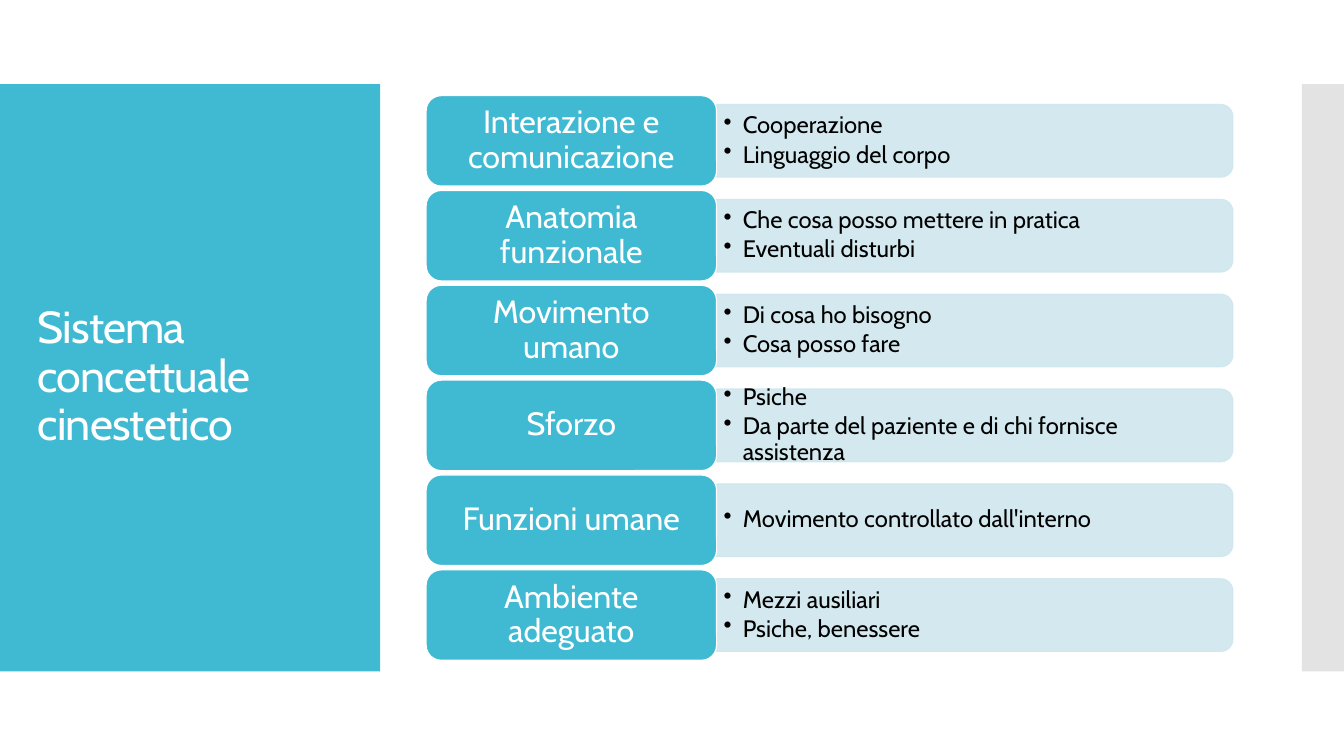
from pptx import Presentation
from pptx.dml.color import RGBColor
from pptx.enum.shapes import MSO_SHAPE as Shape
from pptx.enum.text import MSO_ANCHOR as Anchor, PP_ALIGN as Align
from pptx.oxml.ns import qn
from pptx.util import Cm, Pt
from lxml.etree import SubElement

# Content
TITLE = "Sistema concettuale cinestetico"
CONCEPTS = [
    ("Interazione e comunicazione", ["Cooperazione", "Linguaggio del corpo"]),
    ("Anatomia funzionale", ["Che cosa posso mettere in pratica", "Eventuali disturbi"]),
    ("Movimento umano", ["Di cosa ho bisogno", "Cosa posso fare"]),
    ("Sforzo", ["Psiche", "Da parte del paziente e di chi fornisce assistenza"]),
    ("Funzioni umane", ["Movimento controllato dall'interno"]),
    ("Ambiente adeguato", ["Mezzi ausiliari", "Psiche, benessere"]),
]


class Theme:
    font = "Cabin"
    accent = RGBColor(0x40, 0xBA, 0xD2)
    pale = RGBColor(0xCF, 0xE7, 0xEE)
    grey = RGBColor(0xC8, 0xC8, 0xC8)
    white = RGBColor(0xFF, 0xFF, 0xFF)
    black = RGBColor(0, 0, 0)
    title_size, label_size, detail_size = Pt(32), Pt(23), Pt(17)
    line_width = Pt(0.85)


# Layout in centimetres
SLIDE_W, SLIDE_H = 33.87, 19.05
BAND_TOP, BAND_H = 2.12, 14.8
PANEL_W, STRIP_W = 9.58, 1.06
LABEL_LEFT, LABEL_TOP, LABEL_W, LABEL_H = 10.74, 2.41, 7.32, 2.28
ROW_PITCH = 2.39
BAR_W, BAR_H = 13.01, 1.83
DETAIL_W, DETAIL_H = 12.93, 1.65
INDENT = Cm(0.48)


def set_alpha(color_format, percent):
    fill = color_format._xPr.find(qn("a:solidFill"))
    SubElement(fill[0], qn("a:alpha"), val=str(percent * 1000))


def add_block(shapes, kind, box, color, line=None, alpha=None):
    s = shapes.add_shape(kind, *map(Cm, box))
    s.shadow.inherit = False
    s.fill.solid()
    s.fill.fore_color.rgb = color
    if line is None:
        s.line.fill.background()
    else:
        s.line.color.rgb = line
        s.line.width = Theme.line_width
    if alpha:
        set_alpha(s.fill, alpha)
        if line is not None:
            set_alpha(s.line.fill, alpha)
    return s


def write(s, lines, size, color, align, margins, space_after=0):
    tf = s.text_frame
    tf.word_wrap = True
    tf.vertical_anchor = Anchor.MIDDLE
    tf.margin_left = tf.margin_right = Cm(margins[0])
    tf.margin_top = tf.margin_bottom = Cm(margins[1])
    tf.text = "\n".join(lines)
    for p in tf.paragraphs:
        p.alignment = align
        p.line_spacing = 0.9
        p.space_after = Pt(space_after)
        for r in p.runs:
            r.font.name = Theme.font
            r.font.size = size
            r.font.color.rgb = color
    return tf


def add_bullet(p):
    pPr = p._p.get_or_add_pPr()
    pPr.set("marL", str(INDENT))
    pPr.set("indent", str(-INDENT))
    SubElement(pPr, qn("a:buChar"), char="•")


def add_concept(shapes, row, label, details):
    top = LABEL_TOP + row * ROW_PITCH
    middle = top + LABEL_H / 2
    detail_left = LABEL_LEFT + LABEL_W

    # Pale bar, turned so its rounded end faces right
    bar_box = (detail_left + (BAR_W - BAR_H) / 2, middle - BAR_W / 2, BAR_H, BAR_W)
    bar = add_block(shapes, Shape.ROUND_2_SAME_RECTANGLE, bar_box,
                    Theme.pale, line=Theme.pale, alpha=90)
    bar.rotation = 90

    # Bulleted details
    box = (detail_left, middle - DETAIL_H / 2, DETAIL_W, DETAIL_H)
    s = shapes.add_textbox(*map(Cm, box))
    tf = write(s, details, Theme.detail_size, Theme.black, Align.LEFT,
               (0.18, 0.1), space_after=2.5)
    for p in tf.paragraphs:
        add_bullet(p)

    # Concept label
    s = add_block(shapes, Shape.ROUNDED_RECTANGLE,
                  (LABEL_LEFT, top, LABEL_W, LABEL_H), Theme.accent, line=Theme.white)
    write(s, [label], Theme.label_size, Theme.white, Align.CENTER, (0.36, 0.24))


def main():
    prs = Presentation()
    prs.slide_width, prs.slide_height = Cm(SLIDE_W), Cm(SLIDE_H)
    shapes = prs.slides.add_slide(prs.slide_layouts[6]).shapes

    # Side panel and right strip
    add_block(shapes, Shape.RECTANGLE, (0, BAND_TOP, PANEL_W, BAND_H), Theme.accent)
    add_block(shapes, Shape.RECTANGLE,
              (SLIDE_W - STRIP_W, BAND_TOP, STRIP_W, BAND_H), Theme.grey, alpha=50)

    # Title
    s = shapes.add_textbox(Cm(0.7), Cm(3.13), Cm(8.18), Cm(12.78))
    tf = write(s, [TITLE], Theme.title_size, Theme.white, Align.LEFT, (0.25, 0.13))
    for r in tf.paragraphs[0].runs:
        r.font._element.set("spc", "-60")

    # Concept rows
    for row, (label, details) in enumerate(CONCEPTS):
        add_concept(shapes, row, label, details)

    prs.save("out.pptx")


if __name__ == "__main__":
    main()
